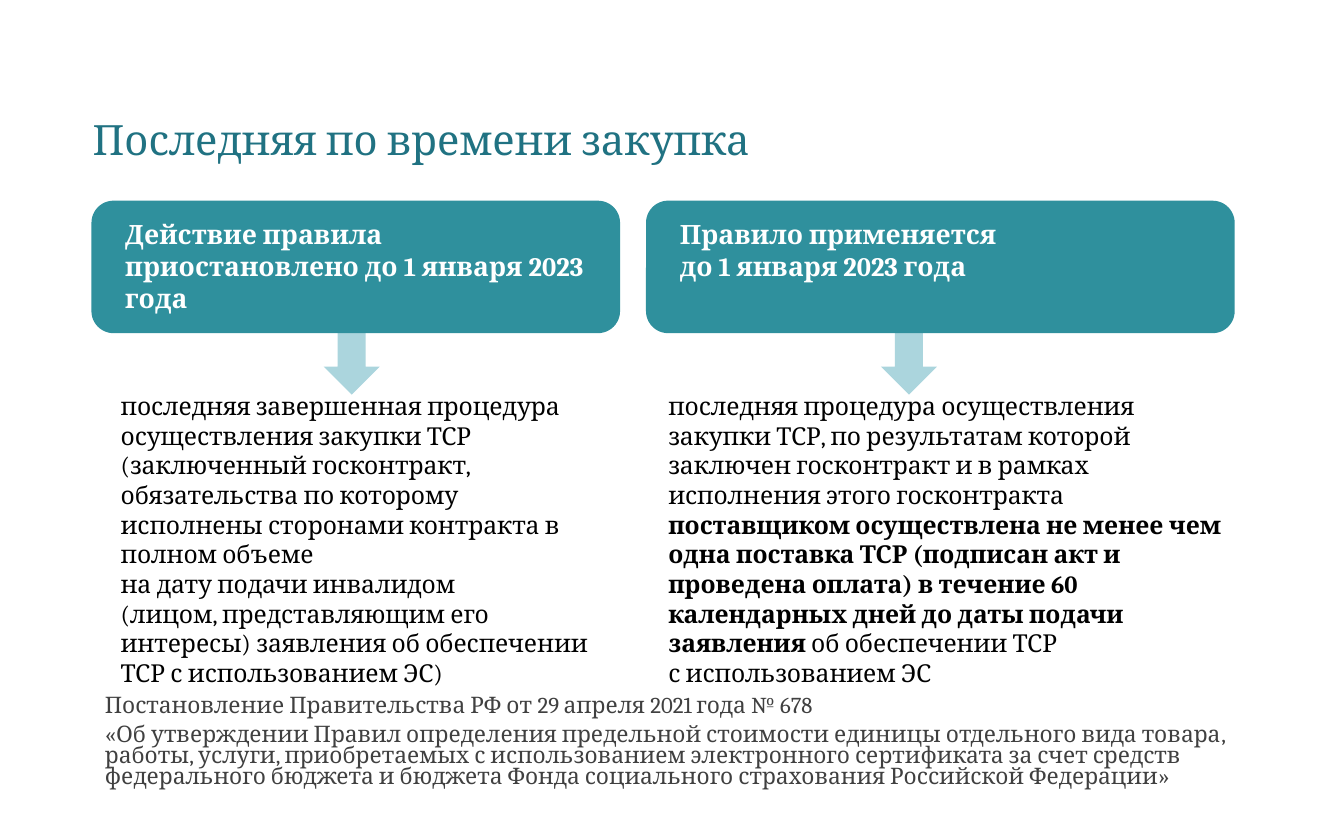
from pptx import Presentation
from pptx.dml.color import RGBColor
from pptx.enum.shapes import MSO_SHAPE
from pptx.enum.text import MSO_ANCHOR, PP_ALIGN
from pptx.util import Inches, Pt

ROUNDED, DOWN_ARROW = MSO_SHAPE.ROUNDED_RECTANGLE, MSO_SHAPE.DOWN_ARROW
TOP, BOTTOM, LEFT = MSO_ANCHOR.TOP, MSO_ANCHOR.BOTTOM, PP_ALIGN.LEFT
FONT = "Cambria"
COLORS = {"title": "207282", "header": "2F909D", "arrow": "ABD5DD",
          "white": "FFFFFF", "body": "000000", "source": "404040"}

TITLE = "Последняя по времени закупка"
# Body text is a list of (text, bold) pieces.
RULES = [
    {"header": "Действие правила приостановлено до 1 января 2023 года",
     "header_span": (0.67, 3.87), "body_span": (0.67, 3.92), "arrow_left": 2.37,
     "body": [("последняя завершенная процедура осуществления закупки ТСР\n"
               "(заключенный госконтракт,\n"
               "обязательства по которому исполнены сторонами контракта в полном объеме\n"
               "на дату подачи инвалидом\n"
               "(лицом, представляющим его интересы) заявления об обеспечении ТСР "
               "с использованием ЭС)", False)]},
    {"header": "Правило применяется\nдо 1 января 2023 года",
     "header_span": (4.73, 4.31), "body_span": (4.68, 4.59), "arrow_left": 6.45,
     "body": [("последняя процедура осуществления закупки ТСР, по результатам которой "
               "заключен госконтракт и в рамках исполнения этого госконтракта ", False),
              ("поставщиком осуществлена не менее чем одна поставка ТСР (подписан акт и "
               "проведена оплата) в течение 60 календарных дней до даты подачи заявления", True),
              (" об обеспечении ТСР\nс использованием ЭС", False)]},
]
SOURCE = [
    "Постановление Правительства РФ от 29 апреля 2021 года № 678",
    "«Об утверждении Правил определения предельной стоимости единицы отдельного вида "
    "товара, работы, услуги, приобретаемых с использованием электронного сертификата "
    "за счет средств федерального бюджета и бюджета Фонда социального страхования "
    "Российской Федерации»",
]

HEADER_TOP, HEADER_HEIGHT = 1.47, 0.97
ARROW_TOP, ARROW_WIDTH, ARROW_HEIGHT = 1.89, 0.41, 1
BODY_TOP, BODY_HEIGHT = 2.7, 2.36


def add_block(page, kind, left, top, width, height, fill=None):
    place = [Inches(value) for value in (left, top, width, height)]
    block = page.shapes.add_shape(kind, *place)
    block.shadow.inherit = False
    block.line.fill.background()
    if fill:
        block.fill.solid()
        block.fill.fore_color.rgb = RGBColor.from_string(COLORS[fill])
    else:
        block.fill.background()
    return block


def write_text(box, paragraphs, size, color, anchor=TOP, insets=(0.1, 0.05, 0.1, 0.05),
               line_spacing=None, gap=0):
    """Fill a box with paragraphs, each a list of (text, bold) pieces."""
    frame = box.text_frame
    frame.word_wrap = True
    frame.vertical_anchor = anchor
    (frame.margin_left, frame.margin_top,
     frame.margin_right, frame.margin_bottom) = map(Inches, insets)
    for index, pieces in enumerate(paragraphs):
        para = frame.add_paragraph() if index else frame.paragraphs[0]
        para.alignment = LEFT
        para.space_before = Pt(gap if index else 0)
        if line_spacing:
            para.line_spacing = Pt(line_spacing)
        for text, bold in pieces:
            for number, line in enumerate(text.split("\n")):
                if number:
                    para.add_line_break()
                span = para.add_run()
                span.text = line
                span.font.name = FONT
                span.font.size = Pt(size)
                span.font.bold = bold
                span.font.color.rgb = RGBColor.from_string(COLORS[color])


def add_text(page, left, top, width, height, paragraphs, **text_format):
    place = [Inches(value) for value in (left, top, width, height)]
    write_text(page.shapes.add_textbox(*place), paragraphs, **text_format)


def add_rule(page, rule):
    left, width = rule["body_span"]
    body = add_block(page, ROUNDED, left, BODY_TOP, width, BODY_HEIGHT)
    write_text(body, [rule["body"]], size=13, color="body")
    add_block(page, DOWN_ARROW, rule["arrow_left"], ARROW_TOP, ARROW_WIDTH, ARROW_HEIGHT,
              fill="arrow")
    left, width = rule["header_span"]
    header = add_block(page, ROUNDED, left, HEADER_TOP, width, HEADER_HEIGHT, fill="header")
    write_text(header, [[(rule["header"], True)]], size=14, color="white",
               insets=(0.2, 0.08, 0.1, 0.05))


def main():
    deck = Presentation()
    deck.slide_width, deck.slide_height = Inches(9.84), Inches(6.1)
    page = deck.slides.add_slide(deck.slide_layouts[6])
    add_text(page, 0.58, 0.2, 8.86, 1.09, [[(TITLE, False)]], size=22, color="title",
             anchor=BOTTOM, insets=(0.1, 0.05, 0.1, 0.09))
    for rule in RULES:
        add_rule(page, rule)
    add_text(page, 0.67, 5.06, 8.77, 0.64, [[(text, False)] for text in SOURCE],
             size=12, color="source", line_spacing=11, gap=4)
    deck.save("out.pptx")


if __name__ == "__main__":
    main()
